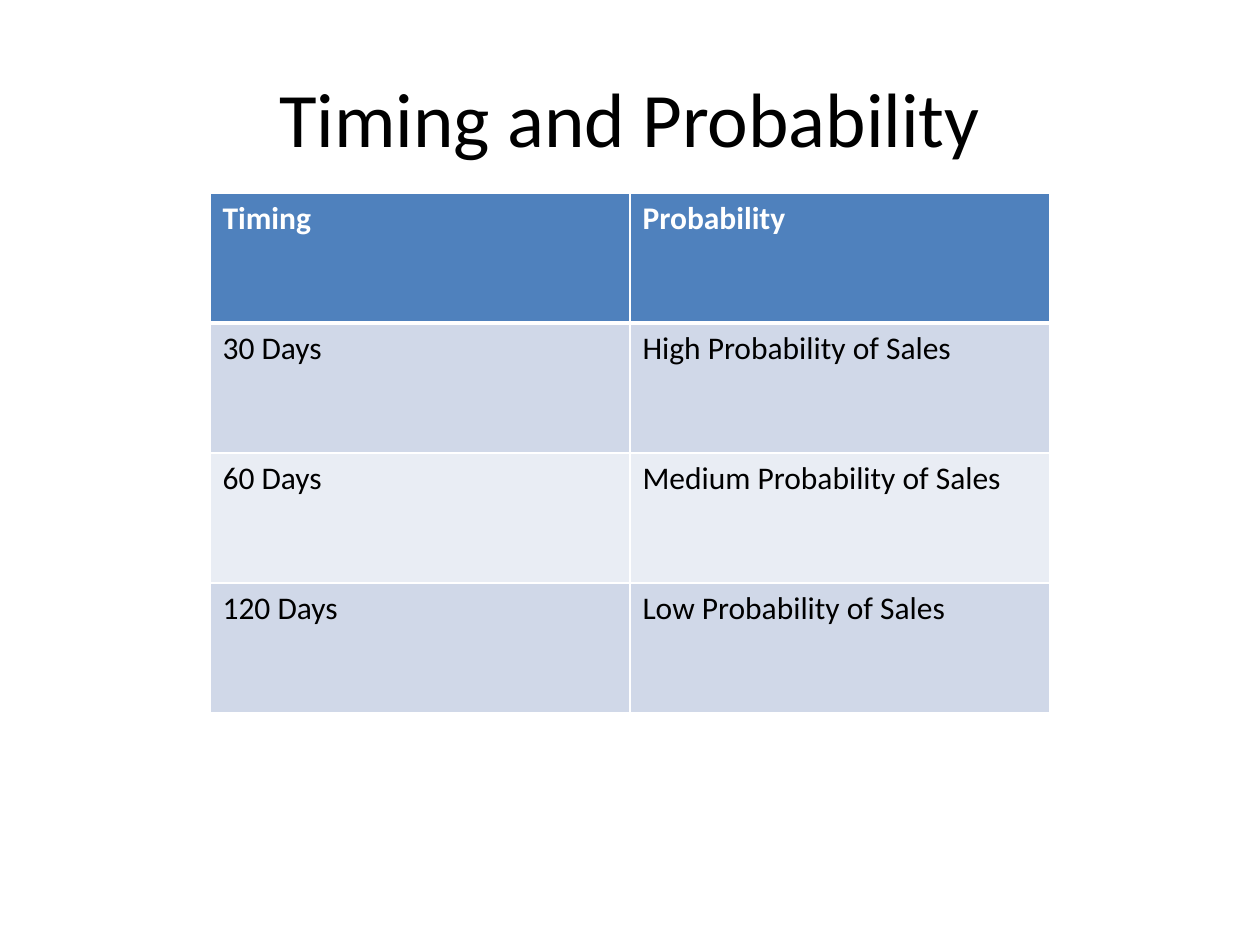
"""Build the Timing and Probability slide with its sales outlook table."""
from dataclasses import dataclass

from lxml.etree import SubElement
from pptx import Presentation
from pptx.dml.color import RGBColor
from pptx.enum.text import MSO_ANCHOR as Anchor, PP_ALIGN as Align
from pptx.oxml.ns import qn
from pptx.util import Emu, Pt

EMU_PER_PX = 914400 / 126
WHITE, BLACK = "FFFFFF", "000000"
HEADER_BLUE, BAND_DARK, BAND_LIGHT = "4F81BD", "D0D8E8", "E9EDF4"


@dataclass(frozen=True)
class OutlookRow:
    timing: str
    probability: str
    fill: str
    ink: str = BLACK
    bold: bool = False
    top_rule: int = 1
    bottom_rule: int = 1


OUTLOOK = [
    OutlookRow("Timing", "Probability", HEADER_BLUE, WHITE, True, bottom_rule=3),
    OutlookRow("30 Days", "High Probability of Sales", BAND_DARK, top_rule=3),
    OutlookRow("60 Days", "Medium Probability of Sales", BAND_LIGHT),
    OutlookRow("120 Days", "Low Probability of Sales", BAND_DARK),
]


def px(length: int) -> Emu:
    return Emu(round(length * EMU_PER_PX))


def color(value: str) -> RGBColor:
    return RGBColor.from_string(value)


def write(frame, words: str, size: int, ink: str, bold: bool = False, align=Align.LEFT) -> None:
    paragraph = frame.paragraphs[0]
    paragraph.alignment = align
    run = paragraph.add_run()
    run.text = words
    for name, value in {"name": "Calibri", "size": Pt(size), "bold": bold}.items():
        setattr(run.font, name, value)
    run.font.color.rgb = color(ink)


def rule_cell(cell, row: OutlookRow) -> None:
    properties = cell._tc.get_or_add_tcPr()
    widths = {"L": 1, "R": 1, "T": row.top_rule, "B": row.bottom_rule}
    for side, points in widths.items():
        line = SubElement(properties, qn(f"a:ln{side}"), w=str(Pt(points)))
        SubElement(SubElement(line, qn("a:solidFill")), qn("a:srgbClr"), val=WHITE)


def draw_title(slide, words: str) -> None:
    frame = slide.shapes.add_textbox(px(63), px(38), px(1134), px(158)).text_frame
    for name, value in {"word_wrap": True, "vertical_anchor": Anchor.MIDDLE}.items():
        setattr(frame, name, value)
    write(frame, words, 44, BLACK, align=Align.CENTER)


def draw_outlook(slide, rows: list[OutlookRow]) -> None:
    table = slide.shapes.add_table(
        len(rows), 2, px(210), px(193), px(840), px(130 * len(rows))
    ).table
    for row, cells in zip(rows, table.rows):
        for cell, words in zip(cells.cells, (row.timing, row.probability)):
            rule_cell(cell, row)
            cell.fill.solid()
            cell.fill.fore_color.rgb = color(row.fill)
            write(cell.text_frame, words, 18, row.ink, row.bold)


def main() -> None:
    deck = Presentation()
    deck.slide_width, deck.slide_height = px(1260), px(945)
    slide = deck.slides.add_slide(deck.slide_layouts[6])
    slide.background.fill.solid()
    slide.background.fill.fore_color.rgb = color(WHITE)
    draw_title(slide, "Timing and Probability")
    draw_outlook(slide, OUTLOOK)
    deck.save("out.pptx")


if __name__ == "__main__":
    main()
